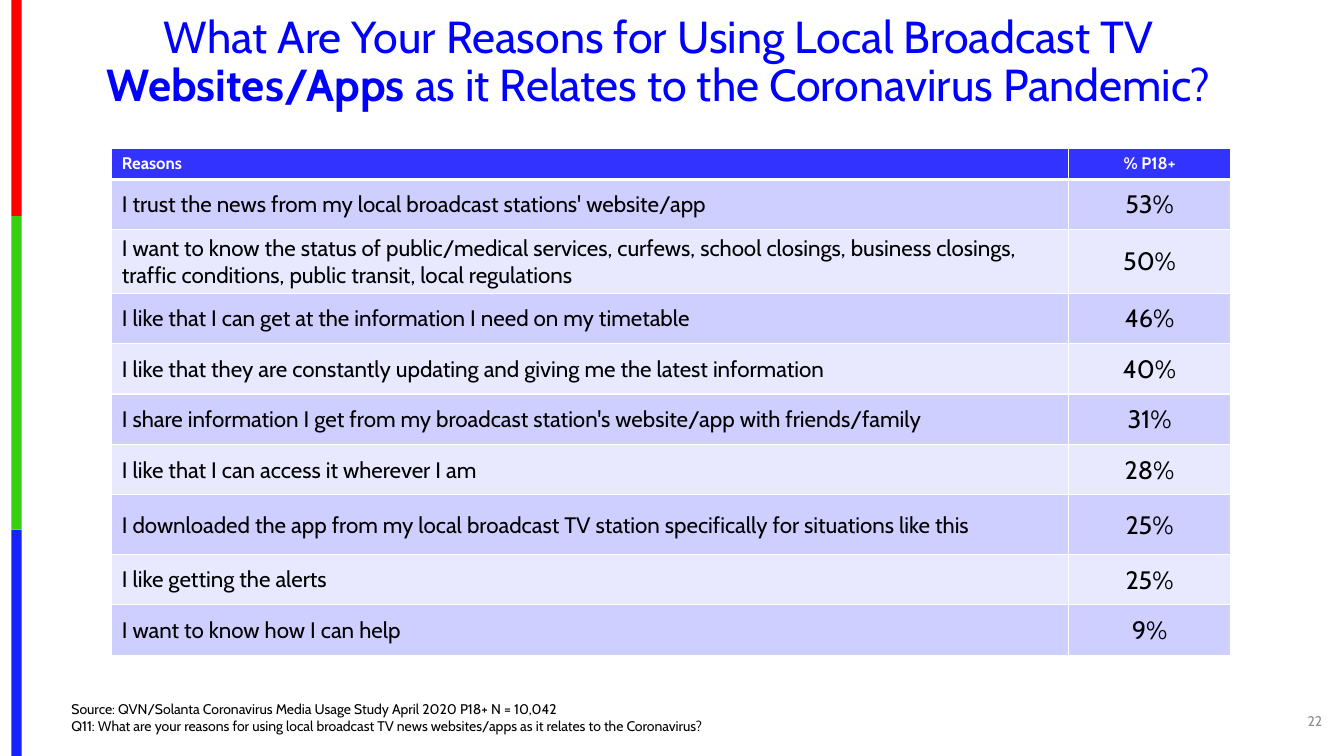
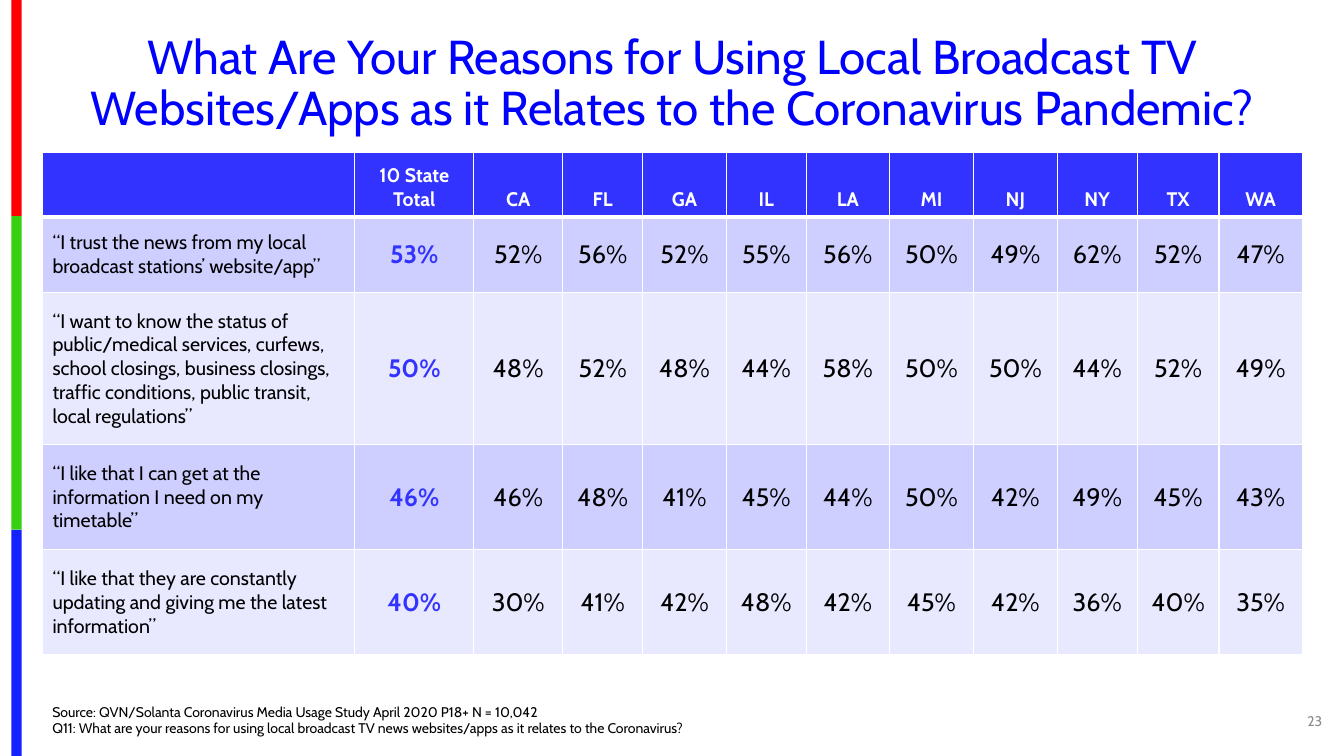
from lxml import etree
from pptx import Presentation
from pptx.dml.color import RGBColor
from pptx.enum.shapes import MSO_SHAPE
from pptx.enum.text import MSO_ANCHOR as Anchor, PP_ALIGN as Align
from pptx.oxml.ns import qn
from pptx.util import Cm, Pt

FONT = "Cabin"
COLORS = {
    "red band": "FE0000", "green band": "36CF12", "blue band": "1322FE",
    "title": "0000FF", "header": "3333FF", "odd row": "CECEFF", "even row": "E8E8FF",
    "text": "000000", "white": "FFFFFF", "page number": "8C8C8C",
}
BANDS = [("red band", 5.45), ("green band", 7.9), ("blue band", 5.7)]
SOURCE = [
    "Source: QVN/Solanta Coronavirus Media Usage Study April 2020 P18+ N = 10,042",
    "Q11: What are your reasons for using local broadcast TV news websites/apps "
    "as it relates to the Coronavirus?",
]
TITLE = [
    "What Are Your Reasons for Using Local Broadcast TV ",
    "Websites/Apps",
    " as it Relates to the Coronavirus Pandemic?",
]

REASONS = [
    ["Reasons", "% P18+"],
    ["I trust the news from my local broadcast stations' website/app", "53%"],
    ["I want to know the status of public/medical services, curfews, school closings, "
     "business closings, traffic conditions, public transit, local regulations", "50%"],
    ["I like that I can get at the information I need on my timetable", "46%"],
    ["I like that they are constantly updating and giving me the latest information", "40%"],
    ["I share information I get from my broadcast station's website/app with friends/family",
     "31%"],
    ["I like that I can access it wherever I am", "28%"],
    ["I downloaded the app from my local broadcast TV station specifically for "
     "situations like this", "25%"],
    ["I like getting the alerts", "25%"],
    ["I want to know how I can help", "9%"],
]
STATE_SHARES = [
    ("“I trust the news from my local broadcast stations’ website/app”",
     [53, 52, 56, 52, 55, 56, 50, 49, 62, 52, 47]),
    ("“I want to know the status of public/medical services, curfews, school closings, "
     "business closings, traffic conditions, public transit, local regulations”",
     [50, 48, 52, 48, 44, 58, 50, 50, 44, 52, 49]),
    ("“I like that I can get at the information I need on my timetable”",
     [46, 46, 48, 41, 45, 44, 50, 42, 49, 45, 43]),
    ("“I like that they are constantly updating and giving me the latest information”",
     [40, 30, 41, 42, 48, 42, 45, 42, 36, 40, 35]),
]
STATES = [["", "10 State Total", "CA", "FL", "GA", "IL", "LA", "MI", "NJ", "NY", "TX", "WA"]]
STATES += [[reason] + [f"{share}%" for share in shares] for reason, shares in STATE_SHARES]

PAGES = [
    {
        "number": "22", "title box": (0.41, 0.25, 32.39, 2.72), "title size": 32,
        "bold topic": True, "source at": (1.55, 17.35),
        "rows": REASONS, "table at": (2.82, 3.73), "widths": [24.1, 4.1],
        "heights": [0.79, 1.27, 1.6, 1.27, 1.27, 1.27, 1.27, 1.5, 1.27, 1.27],
        "header size": 12, "header anchor": Anchor.MIDDLE, "reason size": 16,
        "total column": None, "tight cells": True,
    },
    {
        "number": "23", "title box": (1.07, 0.71, 31.75, 2.87), "title size": 34,
        "bold topic": False, "source at": (1.07, 17.42),
        "rows": STATES, "table at": (1.07, 3.83),
        "widths": [7.87, 3, 2.24, 2.02, 2.1, 2.02, 2.09, 2.13, 2.1, 2.02, 2.06, 2.1],
        "heights": [1.63, 1.92, 3.82, 2.65, 2.65],
        "header size": 14, "header anchor": Anchor.BOTTOM, "reason size": 14,
        "total column": 1, "tight cells": False,
    },
]


def add_text(page, place, paragraphs, size, color, align, anchor):
    """Add a text box; each paragraph is a list of run texts."""
    box = page.shapes.add_textbox(*[Cm(length) for length in place])
    frame = box.text_frame
    frame.word_wrap = True
    frame.vertical_anchor = anchor
    for index, spans in enumerate(paragraphs):
        para = frame.add_paragraph() if index else frame.paragraphs[0]
        for text in spans:
            para.add_run().text = text
        style_paragraph(para, size, color, align)
    return frame


def style_paragraph(para, size, color, align, bold=False):
    para.alignment = align
    para.font.name = FONT
    para.font.size = Pt(size)
    para.font.bold = bold
    para.font.color.rgb = RGBColor.from_string(COLORS[color])


deck = Presentation()
deck.slide_width, deck.slide_height = Cm(33.87), Cm(19.05)
blank = deck.slide_layouts[6]

for content in PAGES:
    page = deck.slides.add_slide(blank)

    band_top = 0
    for color, height in BANDS:
        band = page.shapes.add_shape(
            MSO_SHAPE.RECTANGLE, Cm(0.29), Cm(band_top), Cm(0.26), Cm(height))
        band.shadow.inherit = False
        band.fill.solid()
        band.fill.fore_color.rgb = RGBColor.from_string(COLORS[color])
        band.line.fill.background()
        band_top += height

    title = add_text(page, content["title box"], [TITLE], content["title size"],
                     "title", Align.CENTER, Anchor.TOP).paragraphs[0]
    title.line_spacing = 0.9
    if content["bold topic"]:
        title.runs[1].font.bold = True

    rows, widths, heights = content["rows"], content["widths"], content["heights"]
    left, top = content["table at"]
    table = page.shapes.add_table(len(rows), len(widths), Cm(left), Cm(top),
                                  Cm(sum(widths)), Cm(sum(heights))).table
    table.horz_banding = False
    for column, width in zip(table.columns, widths):
        column.width = Cm(width)
    for row, height in zip(table.rows, heights):
        row.height = Cm(height)

    for row_index, texts in enumerate(rows):
        is_header = row_index == 0
        if is_header:
            fill = "header"
        else:
            fill = "odd row" if row_index % 2 else "even row"
        for column_index, text in enumerate(texts):
            cell = table.cell(row_index, column_index)
            is_reason = column_index == 0
            is_total = column_index == content["total column"]

            # Borders must stand before the fill in the cell properties
            properties = cell._tc.get_or_add_tcPr()
            for side in ("lnL", "lnR", "lnT", "lnB"):
                below_header = (row_index, side) in ((0, "lnB"), (1, "lnT"))
                border = etree.SubElement(properties, qn(f"a:{side}"),
                                          w=str(Pt(3 if below_header else 1)))
                paint = etree.SubElement(border, qn("a:solidFill"))
                etree.SubElement(paint, qn("a:srgbClr"), val=COLORS["white"])
            cell.fill.solid()
            cell.fill.fore_color.rgb = RGBColor.from_string(COLORS[fill])

            cell.vertical_anchor = content["header anchor"] if is_header else Anchor.MIDDLE
            if content["tight cells"] and not is_header:
                cell.margin_left = Cm(0.25 if is_reason else 0.02)
                cell.margin_right = cell.margin_top = Cm(0.02)
                cell.margin_bottom = 0

            if is_header:
                size, color = content["header size"], "white"
            else:
                size = content["reason size"] if is_reason else 18
                color = "header" if is_total else "text"
            cell.text = text
            style_paragraph(cell.text_frame.paragraphs[0], size, color,
                            Align.LEFT if is_reason else Align.CENTER,
                            bold=is_header or is_total)

    add_text(page, (*content["source at"], 24, 1.27), [[line] for line in SOURCE],
             10, "text", Align.LEFT, Anchor.BOTTOM)
    add_text(page, (32.05, 17.65, 1.52, 1.02), [[content["number"]]],
             10, "page number", Align.RIGHT, Anchor.MIDDLE)

deck.save("out.pptx")
